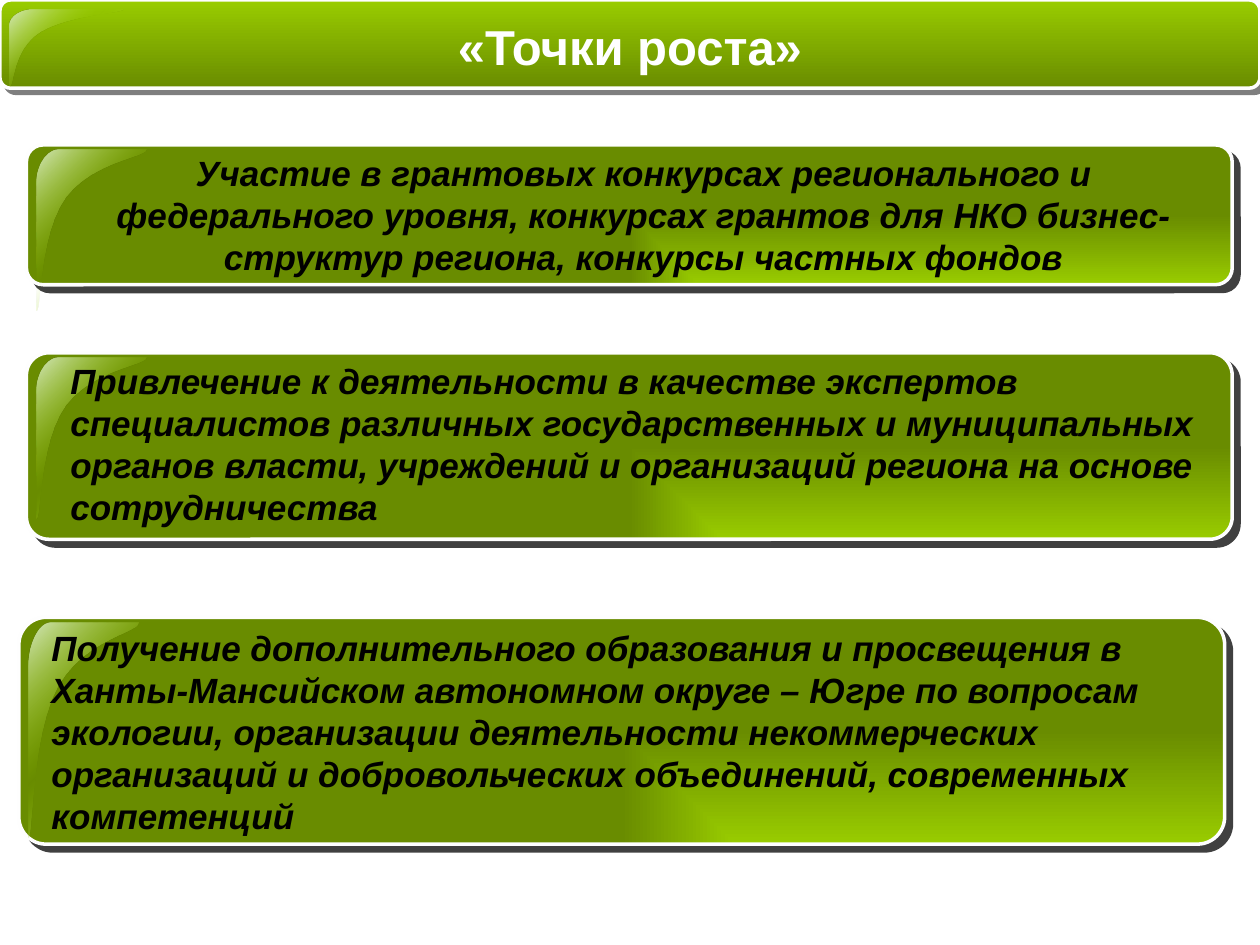
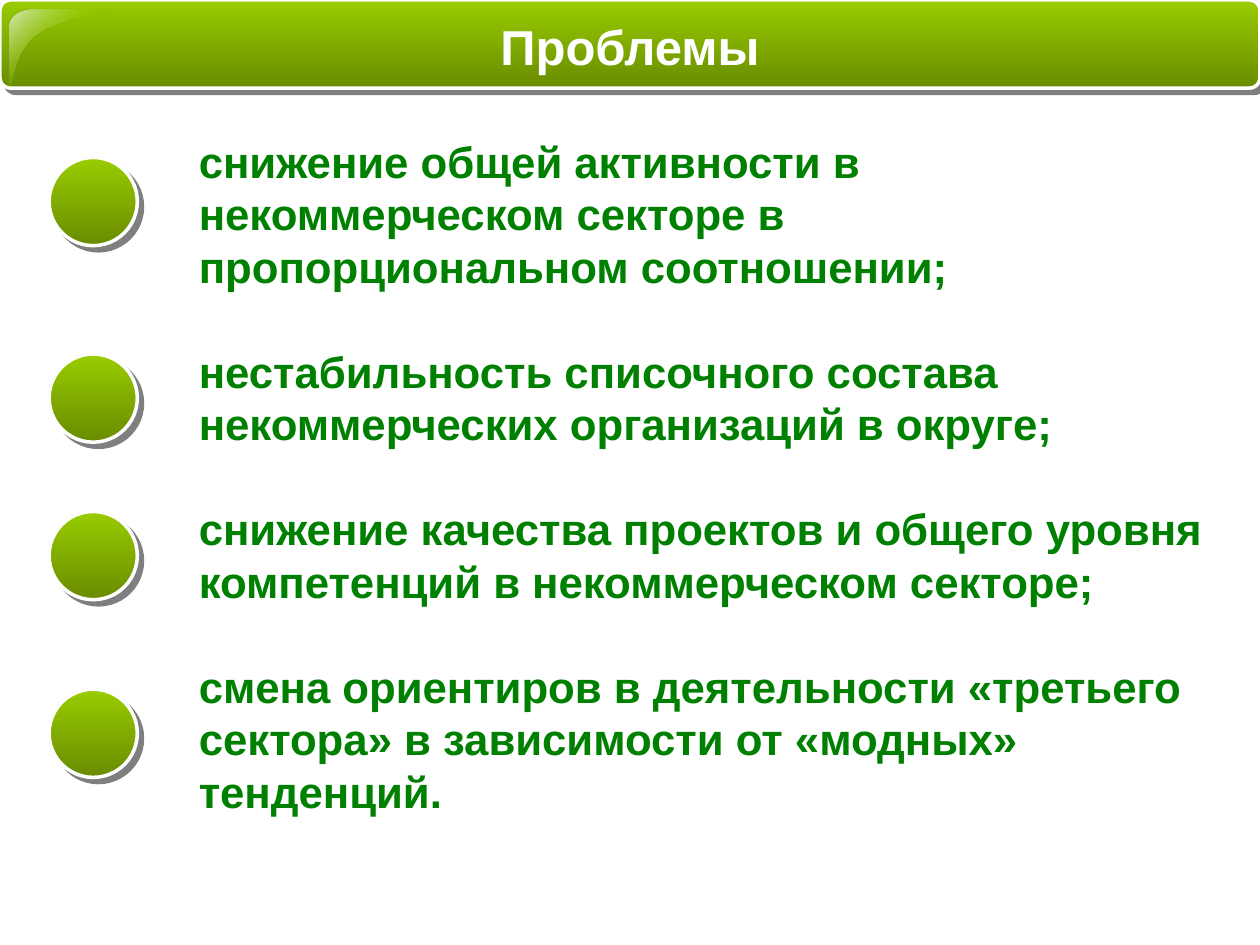
import lxml.etree
import pptx
import pptx.dml.color
import pptx.enum.shapes
import pptx.enum.text
import pptx.oxml
import pptx.oxml.ns
import pptx.util

EMU_PER_PX = 9144
SLIDE_WIDTH, SLIDE_HEIGHT = 1000, 750
FONT = "Arial"
LIME, OLIVE, PALE = "99CC00", "698C00", "D5E8BF"
WHITE, EDGE, BLACK, GREEN = "FFFFFF", "FEFEFE", "000000", "008000"

DOWNWARD = '<a:lin ang="5400000" scaled="1"/>'
DIAGONAL = '<a:lin ang="2700000" scaled="1"/>'
FROM_CORNER = '<a:path path="rect"><a:fillToRect l="100000" t="100000"/></a:path>'
BODY_STOPS = [(0, LIME, 100), (100, OLIVE, 100)]
GLOSS_STOPS = [(0, PALE, 100), (50, LIME, 0), (100, PALE, 100)]

GLOSS_START = (0.2, 0)
GLOSS_CURVES = [
    ((0.2, 0), (0.1, 0), (0, 0.09), (0, 0.2)),
    ((0, 0.98), (0.05, 1), (0.02, 0.52), (0.27, 0.29)),
    ((0.27, 0.29), (0.52, 0.07), (1, 0.05), (0.99, 0)),
]
CURVE_STEPS = 12

GROWTH_PANELS = [
    ((21, 115, 957, 111), 130, (46, 115, 930, 111), pptx.enum.text.PP_ALIGN.CENTER,
     "Участие в грантовых конкурсах регионального и федерального уровня, "
     "конкурсах грантов для НКО бизнес-структур региона, конкурсы частных фондов"),
    ((21, 280, 957, 148), 130, (46, 280, 930, 145), pptx.enum.text.PP_ALIGN.LEFT,
     "Привлечение к деятельности в качестве экспертов специалистов различных "
     "государственных и муниципальных органов власти, учреждений и организаций "
     "региона на основе сотрудничества"),
    ((15, 490, 957, 180), 174, (31, 492, 949, 178), pptx.enum.text.PP_ALIGN.LEFT,
     "Получение дополнительного образования и просвещения в Ханты-Мансийском "
     "автономном округе – Югре по вопросам экологии, организации деятельности "
     "некоммерческих организаций и добровольческих объединений, современных компетенций"),
]
PROBLEMS = [
    (125, "снижение общей активности в некоммерческом секторе в пропорциональном соотношении;"),
    (281, "нестабильность списочного состава некоммерческих организаций в округе;"),
    (406, "снижение качества проектов и общего уровня компетенций в некоммерческом секторе;"),
    (547, "смена ориентиров в деятельности «третьего сектора» в зависимости от «модных» тенденций."),
]


def px(length):
    return pptx.util.Emu(round(length * EMU_PER_PX))


def color(value):
    return pptx.dml.color.RGBColor.from_string(value)


def set_gradient(shape, stops, direction):
    stop_xml = "".join(
        f'<a:gs pos="{position * 1000}"><a:srgbClr val="{value}">'
        f'<a:alpha val="{opacity * 1000}"/></a:srgbClr></a:gs>'
        for position, value, opacity in stops)
    gradient = pptx.oxml.parse_xml(
        f'<a:gradFill {pptx.oxml.ns.nsdecls("a")} rotWithShape="1">'
        f'<a:gsLst>{stop_xml}</a:gsLst>{direction}</a:gradFill>')
    shape.fill.background()
    properties = shape._element.spPr
    properties.replace(properties.find(pptx.oxml.ns.qn("a:noFill")), gradient)


def add_shadow(shape, opacity, distance):
    effects = shape._element.spPr.find(pptx.oxml.ns.qn("a:effectLst"))
    effects.append(pptx.oxml.parse_xml(
        f'<a:outerShdw {pptx.oxml.ns.nsdecls("a")} dist="{pptx.util.Pt(distance)}" '
        f'dir="2700000" algn="ctr" rotWithShape="0"><a:srgbClr val="{BLACK}">'
        f'<a:alpha val="{opacity * 1000}"/></a:srgbClr></a:outerShdw>'))


def add_raised_shape(slide, kind, box, direction, opacity=50, distance=4.2):
    shape = slide.shapes.add_shape(kind, *map(px, box))
    shape.shadow.inherit = False
    set_gradient(shape, BODY_STOPS, direction)
    shape.line.color.rgb = color(EDGE)
    shape.line.width = pptx.util.Pt(2)
    add_shadow(shape, opacity, distance)
    return shape


def curve_points(start, first, second, end):
    for step in range(CURVE_STEPS + 1):
        t = step / CURVE_STEPS
        weights = ((1 - t) ** 3, 3 * t * (1 - t) ** 2, 3 * t * t * (1 - t), t ** 3)
        yield tuple(
            sum(weight * value for weight, value in zip(weights, values))
            for values in zip(start, first, second, end))


def add_gloss(slide, left, top, width, height):
    def place(point):
        return px(left + point[0] * width), px(top + point[1] * height)

    builder = slide.shapes.build_freeform(*place(GLOSS_START))
    points = [place(point) for curve in GLOSS_CURVES for point in curve_points(*curve)]
    builder.add_line_segments(points, close=True)
    gloss = builder.convert_to_shape()
    gloss.shadow.inherit = False
    set_gradient(gloss, GLOSS_STOPS, DIAGONAL)
    gloss.line.fill.background()


def add_rounded_bar(slide, box, gloss_box, direction, **shadow):
    bar = add_raised_shape(
        slide, pptx.enum.shapes.MSO_SHAPE.ROUNDED_RECTANGLE, box, direction, **shadow)
    bar.adjustments[0] = 0.12
    add_gloss(slide, *gloss_box)


def add_text(slide, box, texts, size, text_color, italic=False,
             alignment=pptx.enum.text.PP_ALIGN.LEFT, gap=0):
    frame = slide.shapes.add_textbox(*map(px, box)).text_frame
    frame.word_wrap = True
    frame.auto_size = pptx.enum.text.MSO_AUTO_SIZE.SHAPE_TO_FIT_TEXT
    for index, text in enumerate(texts):
        paragraph = frame.add_paragraph() if index else frame.paragraphs[0]
        paragraph.alignment = alignment
        paragraph.line_spacing = pptx.util.Pt(size * 1.2)
        paragraph.space_before = pptx.util.Pt(gap if index else 0)
        run = paragraph.add_run()
        run.text = text
        run.font.name = FONT
        run.font.size = pptx.util.Pt(size)
        run.font.bold = True
        run.font.italic = italic
        run.font.color.rgb = color(text_color)


def add_titled_slide(presentation, title):
    slide = presentation.slides.add_slide(presentation.slide_layouts[6])
    add_rounded_bar(slide, (0, 0, SLIDE_WIDTH, 70), (8, 8, 91, 62), DOWNWARD)
    add_text(slide, (0, 8, SLIDE_WIDTH, 57), [title], 28, WHITE,
             alignment=pptx.enum.text.PP_ALIGN.CENTER)
    return slide


def add_growth_panel(slide, box, gloss_height, text_box, alignment, text):
    gloss_box = (box[0] + 8, box[1] + 4, 88, gloss_height)
    add_rounded_bar(slide, box, gloss_box, FROM_CORNER, opacity=75, distance=5.5)
    add_text(slide, text_box, [text], 20, BLACK, italic=True, alignment=alignment)


def main():
    presentation = pptx.Presentation()
    presentation.slide_width = px(SLIDE_WIDTH)
    presentation.slide_height = px(SLIDE_HEIGHT)

    growth_slide = add_titled_slide(presentation, "«Точки роста»")
    for panel in GROWTH_PANELS:
        add_growth_panel(growth_slide, *panel)

    problems_slide = add_titled_slide(presentation, "Проблемы")
    add_text(problems_slide, (148, 102, 820, 557), [text for _, text in PROBLEMS],
             25, GREEN, gap=30)
    for top, _ in PROBLEMS:
        add_raised_shape(problems_slide, pptx.enum.shapes.MSO_SHAPE.OVAL,
                         (39, top, 70, 70), DOWNWARD)

    presentation.save("out.pptx")


if __name__ == "__main__":
    main()
